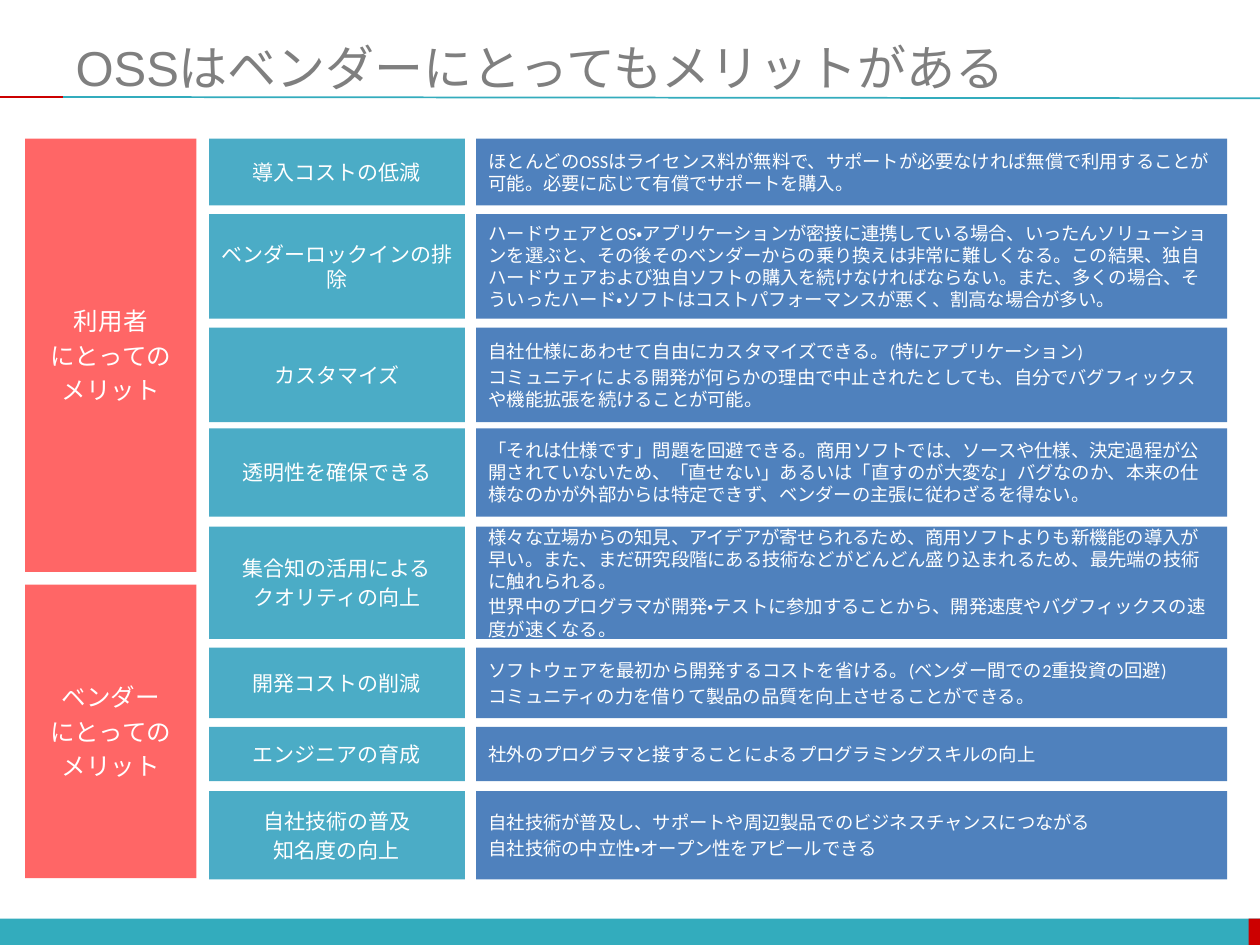
"""Build a slide on the merits of OSS for users and vendors."""
import pptx
import pptx.dml.color
import pptx.enum.lang
import pptx.enum.shapes
import pptx.enum.text
import pptx.oxml.ns
import pptx.util
from dataclasses import dataclass
from lxml import etree

Inches = pptx.util.Inches
Pt = pptx.util.Pt
PP_ALIGN = pptx.enum.text.PP_ALIGN


@dataclass(frozen=True)
class Theme:
    heading: str = "Arial"
    body: str = "Calibri"
    title: str = "7F7F7F"
    text: str = "FFFFFF"
    teal: str = "33ACBD"
    red: str = "CC0000"
    group: str = "FF6666"
    label: str = "4BACC6"
    detail: str = "4F81BD"
    title_size: float = 28
    group_size: float = 14
    label_size: float = 12
    detail_size: float = 10.5


theme = Theme()


def write(tf, lines, font, size, color, align):
    formats = {
        "name": font,
        "size": Pt(size),
        "language_id": pptx.enum.lang.MSO_LANGUAGE_ID.JAPANESE,
    }
    tf.word_wrap = True
    tf.vertical_anchor = pptx.enum.text.MSO_ANCHOR.MIDDLE
    for i, line in enumerate(lines):
        p = tf.add_paragraph() if i else tf.paragraphs[0]
        p.alignment = align
        p.space_before = Pt(round(size * 0.2, 1) if i else 0)
        r = p.add_run()
        r.text = line
        for key, value in formats.items():
            setattr(r.font, key, value)
        r.font.color.rgb = pptx.dml.color.RGBColor.from_string(color)


def box(left, top, width, height, fill):
    sp = s.shapes.add_shape(
        pptx.enum.shapes.MSO_SHAPE.RECTANGLE,
        Inches(left), Inches(top), Inches(width), Inches(height),
    )
    sp.shadow.inherit = False
    sp.fill.solid()
    sp.fill.fore_color.rgb = pptx.dml.color.RGBColor.from_string(fill)
    sp.line.fill.background()
    return sp


prs = pptx.Presentation()
prs.slide_width = Inches(10)
prs.slide_height = Inches(7.5)
s = prs.slides.add_slide(prs.slide_layouts[5])

title = s.shapes.title
place = {"left": 0.5, "top": 0.3, "width": 9.5, "height": 0.46}
for key, value in place.items():
    setattr(title, key, Inches(value))
write(title.text_frame, ["OSSはベンダーにとってもメリットがある"],
      theme.heading, theme.title_size, theme.title, PP_ALIGN.LEFT)

box(0, 7.29, 10, 0.21, theme.teal)
box(9.91, 7.29, 0.09, 0.21, theme.red)

rules = [(0.5, 10, 0.78, theme.teal), (0, 0.5, 0.77, theme.red)]
for start, end, end_y, color in rules:
    line = s.shapes.add_connector(
        pptx.enum.shapes.MSO_CONNECTOR.STRAIGHT,
        Inches(start), Inches(0.77), Inches(end), Inches(end_y),
    )
    line.line.width = Pt(1)
    line.line.color.rgb = pptx.dml.color.RGBColor.from_string(color)
    etree.SubElement(line._element.spPr, pptx.oxml.ns.qn("a:effectLst"))

groups = [(1.1, 3.44, "利用者"), (4.64, 2.33, "ベンダー")]
for top, height, who in groups:
    sp = box(0.2, top, 1.36, height, theme.group)
    write(sp.text_frame, [who, "にとっての", "メリット"],
          theme.body, theme.group_size, theme.text, PP_ALIGN.CENTER)

merits = [
    (1.1, 0.53, ["導入コストの低減"], [
        "ほとんどのOSSはライセンス料が無料で、サポートが必要なければ無償で利用することが可能。"
        "必要に応じて有償でサポートを購入。",
    ]),
    (1.7, 0.83, ["ベンダーロックインの排除"], [
        "ハードウェアとOS・アプリケーションが密接に連携している場合、いったんソリューションを選ぶと、"
        "その後そのベンダーからの乗り換えは非常に難しくなる。この結果、"
        "独自ハードウェアおよび独自ソフトの購入を続けなければならない。また、多くの場合、"
        "そういったハード・ソフトはコストパフォーマンスが悪く、割高な場合が多い。",
    ]),
    (2.6, 0.75, ["カスタマイズ"], [
        "自社仕様にあわせて自由にカスタマイズできる。(特にアプリケーション)",
        "コミュニティによる開発が何らかの理由で中止されたとしても、"
        "自分でバグフィックスや機能拡張を続けることが可能。",
    ]),
    (3.4, 0.7, ["透明性を確保できる"], [
        "「それは仕様です」問題を回避できる。商用ソフトでは、ソースや仕様、"
        "決定過程が公開されていないため、「直せない」あるいは「直すのが大変な」バグなのか、"
        "本来の仕様なのかが外部からは特定できず、ベンダーの主張に従わざるを得ない。",
    ]),
    (4.18, 0.89, ["集合知の活用による", "クオリティの向上"], [
        "様々な立場からの知見、アイデアが寄せられるため、商用ソフトよりも新機能の導入が早い。"
        "また、まだ研究段階にある技術などがどんどん盛り込まれるため、最先端の技術に触れられる。",
        "世界中のプログラマが開発・テストに参加することから、"
        "開発速度やバグフィックスの速度が速くなる。",
    ]),
    (5.14, 0.56, ["開発コストの削減"], [
        "ソフトウェアを最初から開発するコストを省ける。(ベンダー間での2重投資の回避)",
        "コミュニティの力を借りて製品の品質を向上させることができる。",
    ]),
    (5.77, 0.43, ["エンジニアの育成"], [
        "社外のプログラマと接することによるプログラミングスキルの向上",
    ]),
    (6.28, 0.7, ["自社技術の普及", "知名度の向上"], [
        "自社技術が普及し、サポートや周辺製品でのビジネスチャンスにつながる",
        "自社技術の中立性・オープン性をアピールできる",
    ]),
]
for top, height, label, detail in merits:
    sp = box(1.66, top, 2.03, height, theme.label)
    write(sp.text_frame, label, theme.body, theme.label_size, theme.text, PP_ALIGN.CENTER)
    sp = box(3.78, top, 5.96, height, theme.detail)
    write(sp.text_frame, detail, theme.body, theme.detail_size, theme.text, PP_ALIGN.LEFT)

prs.save("out.pptx")
